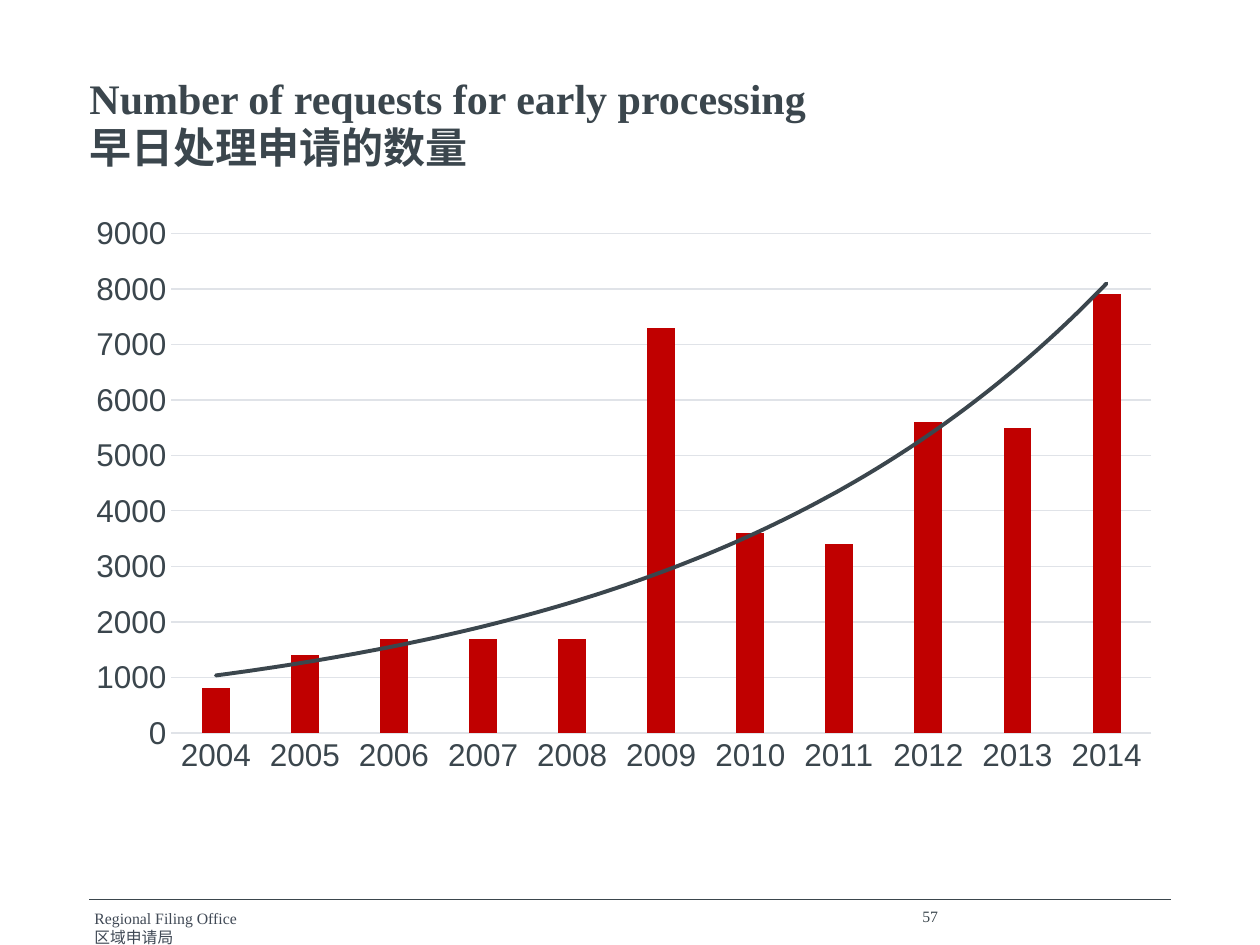
from lxml.etree import SubElement
from pptx import Presentation
from pptx.chart.data import CategoryChartData
from pptx.dml.color import RGBColor
from pptx.enum.chart import XL_CHART_TYPE, XL_TICK_MARK
from pptx.enum.shapes import MSO_CONNECTOR
from pptx.enum.text import MSO_ANCHOR, MSO_AUTO_SIZE, PP_ALIGN
from pptx.oxml import parse_xml
from pptx.oxml.ns import nsdecls, qn
from pptx.util import Inches, Pt

SLATE = RGBColor(0x3B, 0x46, 0x4D)
GREY = RGBColor(0x40, 0x49, 0x55)
PALE = RGBColor(0xE0, 0xE3, 0xE8)
RED = RGBColor(0xC0, 0x00, 0x00)
SERIF, SANS = "Times New Roman", "Arial"

TITLE = ["Number of requests for early processing", "早日处理申请的数量"]
OFFICE = ["Regional Filing Office", "区域申请局"]
PAGE = ["57"]
REQUESTS = {
    2004: 800, 2005: 1400, 2006: 1700, 2007: 1700, 2008: 1700, 2009: 7300,
    2010: 3600, 2011: 3400, 2012: 5600, 2013: 5500, 2014: 7900,
}
LEFT, RIGHT = 0.71, 9.29


def style(font, size, color, name):
    font.size, font.name = Pt(size), name
    font.color.rgb = color


def write(shape, box, lines, size=9, color=SLATE, bold=False, space=None):
    """Place a shape and fill it with one paragraph per line."""
    shape.left, shape.top, shape.width, shape.height = map(Inches, box)
    frame = shape.text_frame
    frame.word_wrap = True
    frame.auto_size = MSO_AUTO_SIZE.NONE
    frame.vertical_anchor = MSO_ANCHOR.TOP
    frame.margin_left = frame.margin_right = 0
    frame.margin_top = frame.margin_bottom = 0
    frame.text = "\n".join(lines)
    for para in frame.paragraphs:
        para.alignment = PP_ALIGN.LEFT
        if space:
            para.line_spacing = Pt(space)
        for run in para.runs:
            style(run.font, size, color, SERIF)
            run.font.bold = bold


def add_label(slide, box, lines, **look):
    write(slide.shapes.add_textbox(0, 0, 0, 0), box, lines, **look)


def add_rule(slide, y):
    rule = slide.shapes.add_connector(
        MSO_CONNECTOR.STRAIGHT, Inches(LEFT), Inches(y), Inches(RIGHT), Inches(y))
    rule.line.color.rgb = SLATE
    rule.line.width = Pt(0.75)
    SubElement(rule.element.spPr, qn("a:effectLst"))


def add_trend(series):
    """Give a bar series an exponential trend line."""
    trend = parse_xml(
        f'<c:trendline {nsdecls("c", "a")}>'
        f'<c:spPr><a:ln w="{Pt(2.25)}" cap="rnd"><a:solidFill>'
        f'<a:srgbClr val="{SLATE}"/></a:solidFill></a:ln></c:spPr>'
        '<c:trendlineType val="exp"/>'
        '<c:dispRSqr val="0"/><c:dispEq val="0"/></c:trendline>')
    series._element.find(qn("c:cat")).addprevious(trend)


def add_bars(slide, box):
    data = CategoryChartData()
    data.categories = [str(year) for year in REQUESTS]
    data.add_series("Series 1", REQUESTS.values())
    chart = slide.shapes.add_chart(
        XL_CHART_TYPE.COLUMN_CLUSTERED, *map(Inches, box), data).chart
    chart.has_legend = chart.has_title = False
    style(chart.font, 10, GREY, SANS)

    for axis in (chart.category_axis, chart.value_axis):
        axis.major_tick_mark = axis.minor_tick_mark = XL_TICK_MARK.NONE
        style(axis.tick_labels.font, 18, SLATE, SANS)
    scale = chart.value_axis
    scale.minimum_scale, scale.maximum_scale, scale.major_unit = 0, 9000, 1000
    scale.format.line.fill.background()
    for line in (chart.category_axis.format.line, scale.major_gridlines.format.line):
        line.color.rgb = PALE
        line.width = Pt(0.75)

    plot = chart.plots[0]
    plot.gap_width, plot.overlap = 219, -27
    plot.vary_by_categories = False
    bars = plot.series[0]
    bars.format.fill.solid()
    bars.format.fill.fore_color.rgb = RED
    add_trend(bars)


def main():
    deck = Presentation()
    deck.slide_width, deck.slide_height = Inches(10), Inches(7.5)
    slide = deck.slides.add_slide(deck.slide_layouts[5])
    write(slide.shapes.title, (LEFT, 0.59, RIGHT - LEFT, 0.59), TITLE,
          size=24, bold=True, space=28)
    add_rule(slide, 7.14)
    add_label(slide, (0.75, 7.21, 1.7, 0.25), OFFICE, color=GREY)
    add_label(slide, (7.32, 7.2, 1.97, 0.24), PAGE)
    add_bars(slide, (0.59, 1.62, 8.72, 4.61))
    deck.save("out.pptx")


if __name__ == "__main__":
    main()
